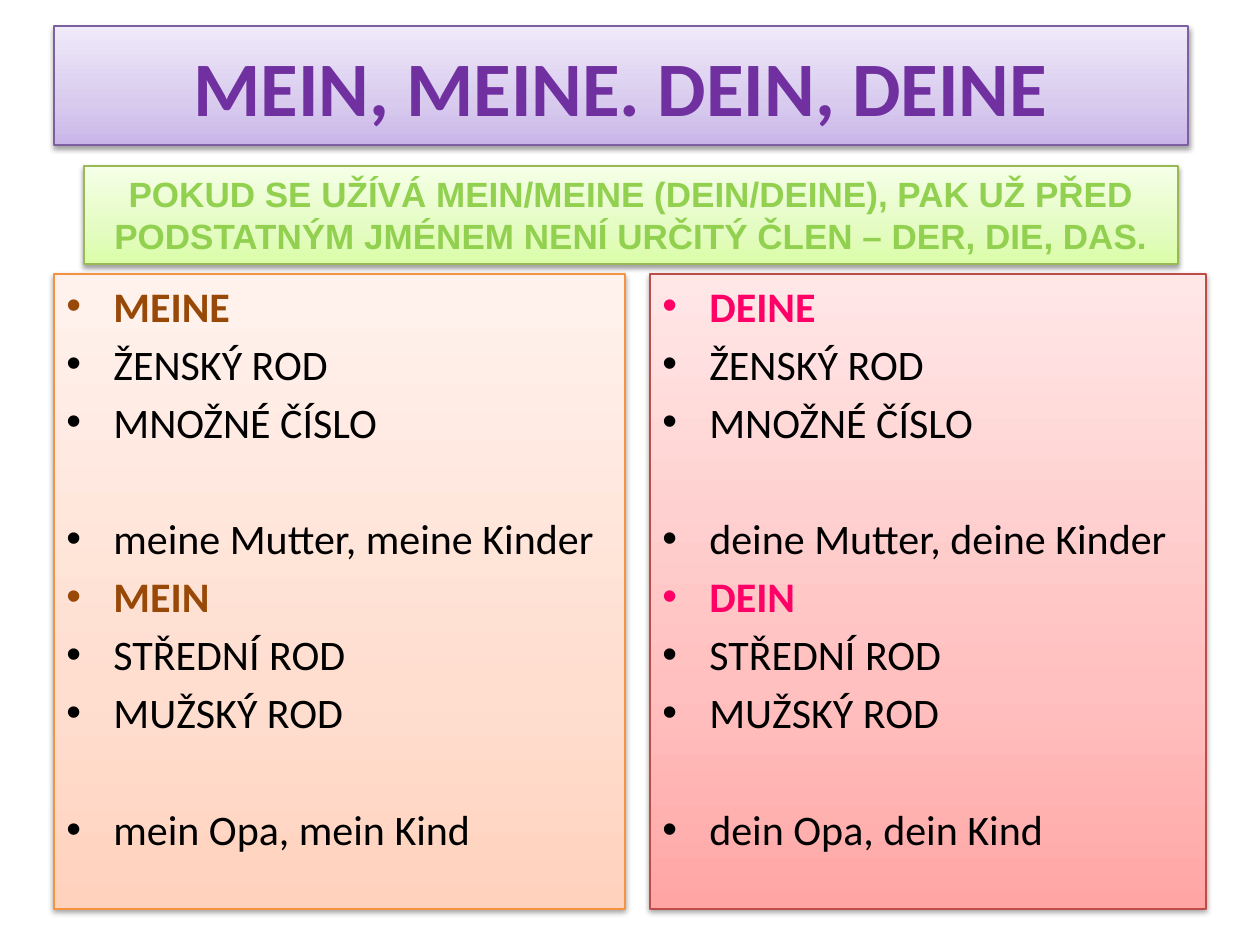
from dataclasses import dataclass

from lxml.etree import SubElement as Sub
from pptx import Presentation
from pptx.dml.color import RGBColor as RGB
from pptx.enum.text import MSO_ANCHOR as Anchor, PP_ALIGN as Align
from pptx.oxml.ns import qn
from pptx.shapes.autoshape import Shape
from pptx.slide import Slide
from pptx.util import Emu, Pt

SCALE = 914400 / 126
HANG = 47
BLACK = RGB(0x00, 0x00, 0x00)
PURPLE = RGB(0x70, 0x30, 0xA0)
GREEN = RGB(0x92, 0xD0, 0x50)
BROWN = RGB(0x98, 0x48, 0x07)
PINK = RGB(0xFF, 0x00, 0x66)


@dataclass
class Panel:
    x: int
    y: int
    w: int
    h: int
    line: RGB
    low: RGB
    mid: RGB
    high: RGB


@dataclass
class Column:
    panel: Panel
    accent: RGB
    stem: str


TITLE = Panel(54, 26, 1134, 119, RGB(0x7D, 0x60, 0xA0),
              RGB(0xC9, 0xB5, 0xE8), RGB(0xD8, 0xCB, 0xEE), RGB(0xF0, 0xEA, 0xF9))
RULE = Panel(84, 166, 1094, 98, RGB(0x98, 0xB9, 0x55),
             RGB(0xDA, 0xFD, 0xA7), RGB(0xE4, 0xFC, 0xC2), RGB(0xF5, 0xFF, 0xE7))
COLUMNS = [
    Column(Panel(54, 274, 571, 635, RGB(0xF6, 0x92, 0x40),
                 RGB(0xFF, 0xD2, 0xBD), RGB(0xFF, 0xDE, 0xD0), RGB(0xFF, 0xF2, 0xED)),
           BROWN, "mein"),
    Column(Panel(650, 274, 556, 635, RGB(0xBF, 0x4C, 0x48),
                 RGB(0xFF, 0xA6, 0xA5), RGB(0xFF, 0xC0, 0xBF), RGB(0xFF, 0xE7, 0xE7)),
           PINK, "dein"),
]


def px(n: int) -> Emu:
    return Emu(round(n * SCALE))


def style(shape: Shape, panel: Panel) -> None:
    shape.left, shape.top = px(panel.x), px(panel.y)
    shape.width, shape.height = px(panel.w), px(panel.h)
    shape.fill.gradient()
    shape.line.color.rgb = panel.line
    shape.line.width = Pt(0.75)
    shape.shadow.inherit = False
    props = shape.element.spPr

    grad = props.find(qn("a:gradFill"))
    for child in list(grad):
        grad.remove(child)
    stops = Sub(grad, qn("a:gsLst"))
    for pos, color in ((0, panel.low), (35, panel.mid), (100, panel.high)):
        stop = Sub(stops, qn("a:gs"), pos=str(pos * 1000))
        Sub(stop, qn("a:srgbClr"), val=str(color))
    Sub(grad, qn("a:lin"), ang="16200000", scaled="0")

    shade = Sub(props.find(qn("a:effectLst")), qn("a:outerShdw"),
                blurRad=str(Pt(3.1)), dist=str(Pt(1.6)), dir="5400000", rotWithShape="0")
    tint = Sub(shade, qn("a:srgbClr"), val="000000")
    Sub(tint, qn("a:alpha"), val="38000")


def write(shape: Shape, text: str, *, size: int, color: RGB, font: str = "Calibri",
          bold: bool = True, align: Align = Align.CENTER, gap: float = 0,
          bullet: bool = False, first: bool = True) -> None:
    frame = shape.text_frame
    para = frame.paragraphs[0] if first else frame.add_paragraph()
    para.alignment = align
    para.space_before = Pt(gap)
    run = para.add_run()
    run.text = text
    run.font.name, run.font.size, run.font.bold = font, Pt(size), bold
    run.font.color.rgb = color
    if bullet:
        props = para._p.get_or_add_pPr()
        props.set("marL", str(px(HANG)))
        props.set("indent", str(px(-HANG)))
        Sub(props, qn("a:buFont"), typeface="Arial")
        Sub(props, qn("a:buChar"), char="•")


def add_box(slide: Slide, panel: Panel) -> Shape:
    box = slide.shapes.add_textbox(0, 0, 0, 0)
    style(box, panel)
    box.text_frame.word_wrap = True
    return box


def add_column(slide: Slide, col: Column) -> None:
    box = add_box(slide, col.panel)
    stem, fem = col.stem, col.stem + "e"
    groups = [
        (fem, "ŽENSKÝ ROD", "MNOŽNÉ ČÍSLO", f"{fem} Mutter, {fem} Kinder"),
        (stem, "STŘEDNÍ ROD", "MUŽSKÝ ROD", f"{stem} Opa, {stem} Kind"),
    ]
    for g, (head, one, two, sample) in enumerate(groups):
        for i, text in enumerate((head.upper(), one, two, sample)):
            write(box, text, size=24, color=BLACK if i else col.accent, bold=i == 0,
                  align=Align.LEFT, gap=37.9 if i == 3 else 4.3, bullet=True,
                  first=g == i == 0)


def main() -> None:
    deck = Presentation()
    deck.slide_width, deck.slide_height = px(1260), px(945)
    slide = deck.slides.add_slide(deck.slide_layouts[5])
    title = slide.shapes.title
    style(title, TITLE)
    title.text_frame.vertical_anchor = Anchor.MIDDLE
    write(title, "MEIN, MEINE. DEIN, DEINE", size=44, color=PURPLE)
    for col in COLUMNS:
        add_column(slide, col)
    write(add_box(slide, RULE),
          "POKUD SE UŽÍVÁ MEIN/MEINE (DEIN/DEINE), PAK UŽ PŘED "
          "PODSTATNÝM JMÉNEM NENÍ URČITÝ ČLEN – DER, DIE, DAS.",
          size=20, color=GREEN, font="Arial")
    deck.save("out.pptx")


if __name__ == "__main__":
    main()
